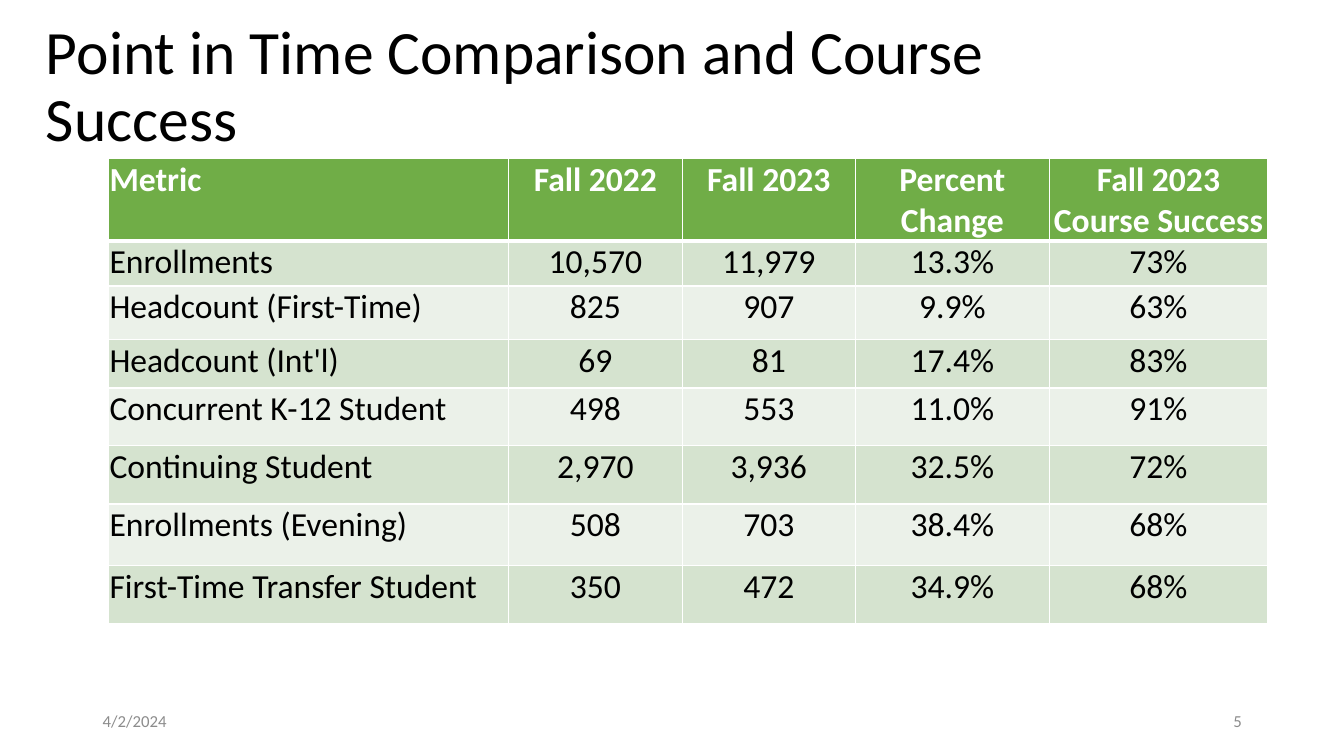
from lxml.etree import SubElement
from pptx import Presentation
from pptx.dml.color import RGBColor
from pptx.enum.text import MSO_ANCHOR, PP_ALIGN
from pptx.oxml.ns import qn
from pptx.util import Cm, Pt

FONT = "Calibri"
WHITE, BLACK, GRAY = "FFFFFF", "000000", "8C8C8C"
GREEN, BANDS = "70AD47", ("D5E3CF", "EBF1E9")

WIDTHS = (10.08, 4.37, 4.37, 4.88, 5.51)
HEIGHTS = (2.08, 1.14, 1.35, 1.22, 1.45, 1.47, 1.55, 1.47)
ROWS = (
    # \n starts a paragraph, \v breaks a line within one
    ("Metric", "Fall 2022", "Fall 2023", "Percent\vChange",
     "Fall 2023\nCourse Success"),
    ("Enrollments", "10,570", "11,979", "13.3%", "73%"),
    ("Headcount (First-Time)", "825", "907", "9.9%", "63%"),
    ("Headcount (Int'l)", "69", "81", "17.4%", "83%"),
    ("Concurrent K-12 Student", "498", "553", "11.0%", "91%"),
    ("Continuing Student", "2,970", "3,936", "32.5%", "72%"),
    ("Enrollments (Evening)", "508", "703", "38.4%", "68%"),
    ("First-Time Transfer Student", "350", "472", "34.9%", "68%"),
)


def paint(item, color):
    """Give a fill a solid colour, or a font its text colour."""
    if hasattr(item, "solid"):
        item.solid()
        item.fore_color.rgb = RGBColor.from_string(color)
    else:
        item.color.rgb = RGBColor.from_string(color)


def write(frame, text, size, color, align=PP_ALIGN.LEFT, bold=False):
    for i, block in enumerate(text.split("\n")):
        para = frame.add_paragraph() if i else frame.paragraphs[0]
        para.alignment = align
        for j, line in enumerate(block.split("\v")):
            if j:
                para.add_line_break()
            run = para.add_run()
            run.text = line
            run.font.name, run.font.size, run.font.bold = FONT, Pt(size), bold
            paint(run.font, color)


def add_text(slide, area, text, size, color, align=PP_ALIGN.LEFT):
    box = slide.shapes.add_textbox(*map(Cm, area))
    frame = box.text_frame
    frame.word_wrap = True
    frame.vertical_anchor = MSO_ANCHOR.MIDDLE
    write(frame, text, size, color, align)
    return frame


def edge(cell, side, width):
    props = cell._tc.get_or_add_tcPr()
    line = SubElement(props, qn(f"a:ln{side}"), w=str(Pt(width)))
    fill = SubElement(line, qn("a:solidFill"))
    SubElement(fill, qn("a:srgbClr"), val=WHITE)


def style(cell, text, row, col):
    head = row == 0
    cell.margin_left = cell.margin_right = cell.margin_top = Cm(0.02)
    cell.margin_bottom = 0
    for side in "LRTB":
        thick = (row, side) in ((0, "B"), (1, "T"))
        edge(cell, side, 3 if thick else 1)
    paint(cell.fill, GREEN if head else BANDS[(row - 1) % 2])
    write(cell.text_frame, text, 24, WHITE if head else BLACK,
          PP_ALIGN.CENTER if col else PP_ALIGN.LEFT, head)


def add_grid(slide, left, top):
    area = (left, top, sum(WIDTHS), sum(HEIGHTS))
    table = slide.shapes.add_table(
        len(ROWS), len(WIDTHS), *map(Cm, area)).table
    for col, width in zip(table.columns, WIDTHS):
        col.width = Cm(width)
    for row, height in zip(table.rows, HEIGHTS):
        row.height = Cm(height)
    for r, texts in enumerate(ROWS):
        for c, text in enumerate(texts):
            style(table.cell(r, c), text, r, c)


def main():
    deck = Presentation()
    deck.slide_width, deck.slide_height = Cm(33.87), Cm(19.05)
    slide = deck.slides.add_slide(deck.slide_layouts[6])
    title = add_text(slide, (0.91, 0.38, 29.21, 3.68),
                     "Point in Time Comparison and Course Success", 44, BLACK)
    title.paragraphs[0].line_spacing = 0.9
    add_text(slide, (2.34, 17.65, 7.62, 1.02), "4/2/2024", 12, GRAY)
    add_text(slide, (23.93, 17.65, 7.62, 1.02), "5", 12, GRAY,
             PP_ALIGN.RIGHT)
    add_grid(slide, 2.74, 3.99)
    deck.save("out.pptx")


if __name__ == "__main__":
    main()
